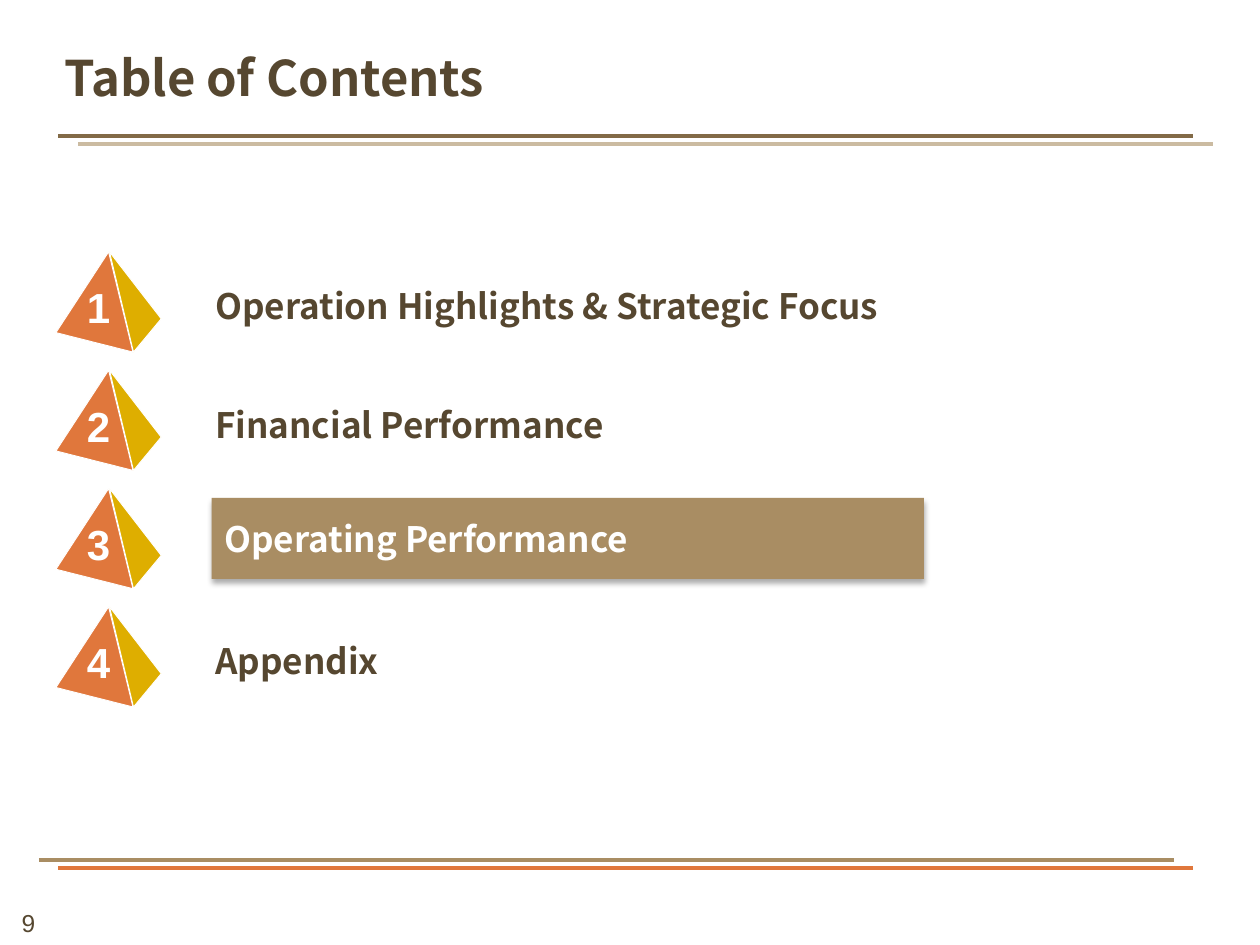
from dataclasses import dataclass

import pptx
import pptx.dml.color
import pptx.enum.shapes
import pptx.enum.text
import pptx.oxml
import pptx.oxml.ns
import pptx.util

Pt = pptx.util.Pt
ALIGN = pptx.enum.text.PP_ALIGN
ANCHOR = pptx.enum.text.MSO_ANCHOR
HEADING_FONT = "Noto Sans CJK SC"
COLORS = {
    "brown": "564730", "umber": "826A47", "tan": "A98D63", "sand": "CBBBA1",
    "orange": "E0773C", "gold": "DEAE00", "white": "FFFFFF", "black": "000000",
}
FIRST_TOP, PITCH = 144, 67.6


@dataclass(frozen=True)
class Rule:
    left: float
    top: float
    color: str


@dataclass(frozen=True)
class Entry:
    title: str
    top: float
    width: float
    height: float
    active: bool = False


@dataclass(frozen=True)
class Style:
    size: float
    color: str
    font: str = HEADING_FONT
    bold: bool = True
    align: ALIGN = ALIGN.LEFT
    anchor: ANCHOR = ANCHOR.MIDDLE
    margins: tuple = (7.2, 3.6)
    wrap: bool = False
    grow: bool = False
    spacing: float | None = None


RULES = [
    Rule(33.2, 496.2, "orange"), Rule(22.2, 491.3, "tan"),
    Rule(44.6, 82.5, "sand"), Rule(33.2, 77.9, "umber"),
]
ENTRIES = [
    Entry("Operation Highlights & Strategic Focus", 149.8, 238.3, 49),
    Entry("Financial Performance", 216.7, 249.8, 51.8),
    Entry("Operating Performance", 284.6, 407, 46.2, active=True),
    Entry("Appendix", 354.2, 174.2, 46.1),
]
PAGE_NUMBER = Style(14, "brown", "Arial", False, ALIGN.CENTER, ANCHOR.TOP,
                    wrap=True, grow=True)
TITLE = Style(28, "brown", anchor=ANCHOR.BOTTOM, margins=(0, 0), wrap=True,
              spacing=Pt(40))
NUMBER = Style(24, "white", "Arial", align=ALIGN.CENTER, margins=(0, 0),
               grow=True, spacing=0.85)
LABEL = Style(20, "brown")
ACTIVE_LABEL = Style(20, "white")


def rgb(name: str) -> pptx.dml.color.RGBColor:
    """Return the named colour."""
    return pptx.dml.color.RGBColor.from_string(COLORS[name])


def write_text(shape, text: str, style: Style) -> None:
    """Put one styled paragraph into a shape."""
    frame = shape.text_frame
    frame.text = text
    frame.word_wrap = style.wrap
    sizing = pptx.enum.text.MSO_AUTO_SIZE
    frame.auto_size = sizing.SHAPE_TO_FIT_TEXT if style.grow else sizing.NONE
    frame.vertical_anchor = style.anchor
    frame.margin_left = frame.margin_right = Pt(style.margins[0])
    frame.margin_top = frame.margin_bottom = Pt(style.margins[1])
    para = frame.paragraphs[0]
    para.alignment = style.align
    para.line_spacing = style.spacing
    font = para.runs[0].font
    font.name, font.size, font.bold = style.font, Pt(style.size), style.bold
    font.color.rgb = rgb(style.color)


def add_text(shapes, text: str, frame: tuple, style: Style) -> None:
    """Add a text box at left, top, width, height."""
    write_text(shapes.add_textbox(*map(Pt, frame)), text, style)


def add_rule(shapes, rule: Rule) -> None:
    """Add a flat horizontal rule."""
    line = shapes.add_connector(
        pptx.enum.shapes.MSO_CONNECTOR.STRAIGHT, Pt(rule.left), Pt(rule.top),
        Pt(rule.left + 648.7), Pt(rule.top))
    line.line.color.rgb = rgb(rule.color)
    line.line.width = Pt(2.25)
    line._element.spPr.append(pptx.oxml.parse_xml(
        f"<a:effectLst {pptx.oxml.ns.nsdecls('a')}/>"))


def add_face(shapes, points: list, color: str) -> None:
    """Add one triangular face of a pyramid."""
    corners = [(Pt(x), Pt(y)) for x, y in points]
    builder = shapes.build_freeform(*corners[0])
    builder.add_line_segments(corners[1:], close=True)
    face = builder.convert_to_shape()
    face.shadow.inherit = False
    face.fill.solid()
    face.fill.fore_color.rgb = rgb(color)
    face.line.color.rgb = rgb("white")
    face.line.width = Pt(0.5)


def add_pyramid(shapes, number: int) -> None:
    """Add a numbered pyramid in its row."""
    top = FIRST_TOP + (number - 1) * PITCH
    group = shapes.add_group_shape().shapes
    add_face(group, [(62.1, top), (32, top + 46.1), (76, top + 57.2)], "orange")
    add_face(group, [(62.6, top), (92.1, top + 38.2), (76.3, top + 57.2)], "gold")
    add_text(group, str(number), (49.4, top + 21.5, 13.7, 24.5), NUMBER)


def add_active_bar(shapes, entry: Entry) -> None:
    """Add the shaded bar of the current section."""
    bar = shapes.add_shape(
        pptx.enum.shapes.MSO_SHAPE.RECTANGLE, Pt(121), Pt(entry.top),
        Pt(entry.width), Pt(entry.height))
    bar.shadow.inherit = False
    bar.fill.solid()
    bar.fill.fore_color.rgb = rgb("tan")
    bar.line.fill.background()
    effects = bar._element.spPr.find(pptx.oxml.ns.qn("a:effectLst"))
    effects.append(pptx.oxml.parse_xml(
        f'<a:outerShdw {pptx.oxml.ns.nsdecls("a")} blurRad="{Pt(3.5)}" '
        f'dist="{Pt(2.2)}" dir="5400000" rotWithShape="0">'
        f'<a:srgbClr val="{COLORS["black"]}"><a:alpha val="32000"/>'
        '</a:srgbClr></a:outerShdw>'))
    write_text(bar, entry.title, ACTIVE_LABEL)


def main() -> None:
    """Build the table of contents slide."""
    deck = pptx.Presentation()
    deck.slide_width, deck.slide_height = Pt(720), Pt(540)
    shapes = deck.slides.add_slide(deck.slide_layouts[6]).shapes
    add_text(shapes, "9", (-12.2, 515.5, 56.9, 24.5), PAGE_NUMBER)
    for rule in RULES:
        add_rule(shapes, rule)
    for number, entry in enumerate(ENTRIES, 1):
        add_pyramid(shapes, number)
        if entry.active:
            add_active_bar(shapes, entry)
        else:
            add_text(shapes, entry.title,
                     (115.9, entry.top, entry.width, entry.height), LABEL)
    add_text(shapes, "Table of Contents", (36.7, 23.8, 677.5, 36.7), TITLE)
    deck.save("out.pptx")


if __name__ == "__main__":
    main()
